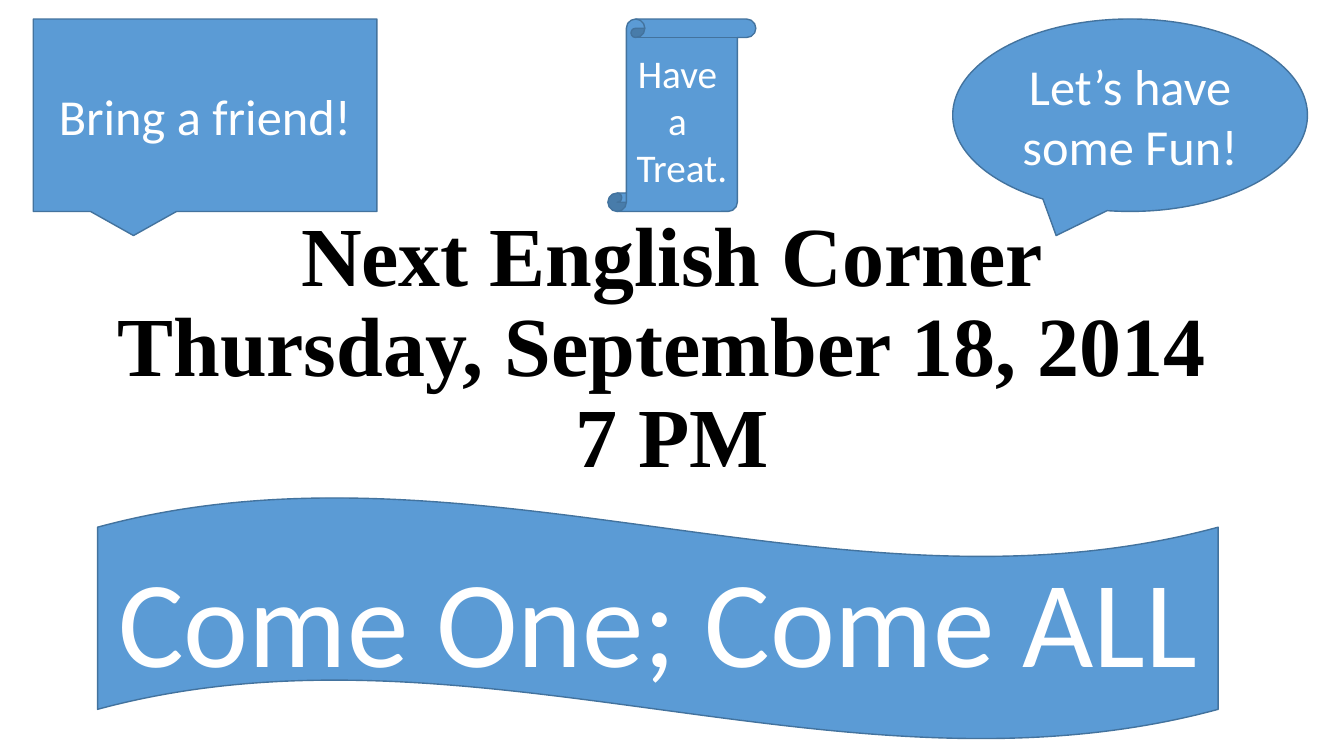
"""Build the English Corner invitation slide."""
from dataclasses import dataclass

from pptx import Presentation
from pptx.dml.color import RGBColor
from pptx.enum.shapes import MSO_SHAPE
from pptx.enum.text import MSO_ANCHOR, PP_ALIGN
from pptx.util import Cm, Pt

ELLIPSE_CALLOUT = MSO_SHAPE.OVAL_CALLOUT
RECTANGLE_CALLOUT = MSO_SHAPE.RECTANGULAR_CALLOUT
WAVE = MSO_SHAPE.WAVE
SCROLL = MSO_SHAPE.VERTICAL_SCROLL
MIDDLE = MSO_ANCHOR.MIDDLE
CENTER = PP_ALIGN.CENTER


@dataclass(frozen=True)
class Theme:
    fill: RGBColor = RGBColor(0x5B, 0x9B, 0xD5)
    outline: RGBColor = RGBColor(0x43, 0x73, 0x9E)
    light: RGBColor = RGBColor(0xFF, 0xFF, 0xFF)
    dark: RGBColor = RGBColor(0x00, 0x00, 0x00)
    body_font: str = "Calibri"
    title_font: str = "Times New Roman"
    scroll_size: int = 28
    callout_size: int = 36
    title_size: int = 60
    banner_size: int = 88


theme = Theme()


def write_text(shape, text, *, size, font=theme.body_font, color=theme.light,
               bold=False, line_spacing=1.0):
    frame = shape.text_frame
    frame.word_wrap = True
    frame.vertical_anchor = MIDDLE
    frame.text = text
    for paragraph in frame.paragraphs:
        paragraph.alignment = CENTER
        paragraph.line_spacing = line_spacing
        for run in paragraph.runs:
            run.font.name = font
            run.font.size = Pt(size)
            run.font.bold = bold
            run.font.color.rgb = color


presentation = Presentation()
presentation.slide_width = Cm(33.87)
presentation.slide_height = Cm(19.05)
slide = presentation.slides.add_slide(presentation.slide_layouts[6])

title = slide.shapes.add_textbox(Cm(2.33), Cm(5.21), Cm(29.21), Cm(7.2))
write_text(title, "Next English Corner\nThursday, September 18, 2014 \n7 PM",
           size=theme.title_size, font=theme.title_font, color=theme.dark,
           bold=True, line_spacing=0.9)

top_row = 0.48
top_height = 4.85
banners = [
    (ELLIPSE_CALLOUT, 24.01, top_row, 8.94, top_height,
     "Let’s have some Fun!", theme.callout_size),
    (RECTANGLE_CALLOUT, 0.84, top_row, 8.66, top_height,
     "Bring a friend!", theme.callout_size),
    (WAVE, 2.46, 12.52, 28.24, 6.12, "Come One; Come ALL", theme.banner_size),
    (SCROLL, 15.32, top_row, 3.73, top_height,
     "Have \na \nTreat.", theme.scroll_size),
]
for kind, left, top, width, height, text, size in banners:
    banner = slide.shapes.add_shape(kind, Cm(left), Cm(top), Cm(width), Cm(height))
    banner.shadow.inherit = False
    banner.fill.solid()
    banner.fill.fore_color.rgb = theme.fill
    banner.line.color.rgb = theme.outline
    banner.line.width = Pt(1)
    write_text(banner, text, size=size)

presentation.save("out.pptx")
